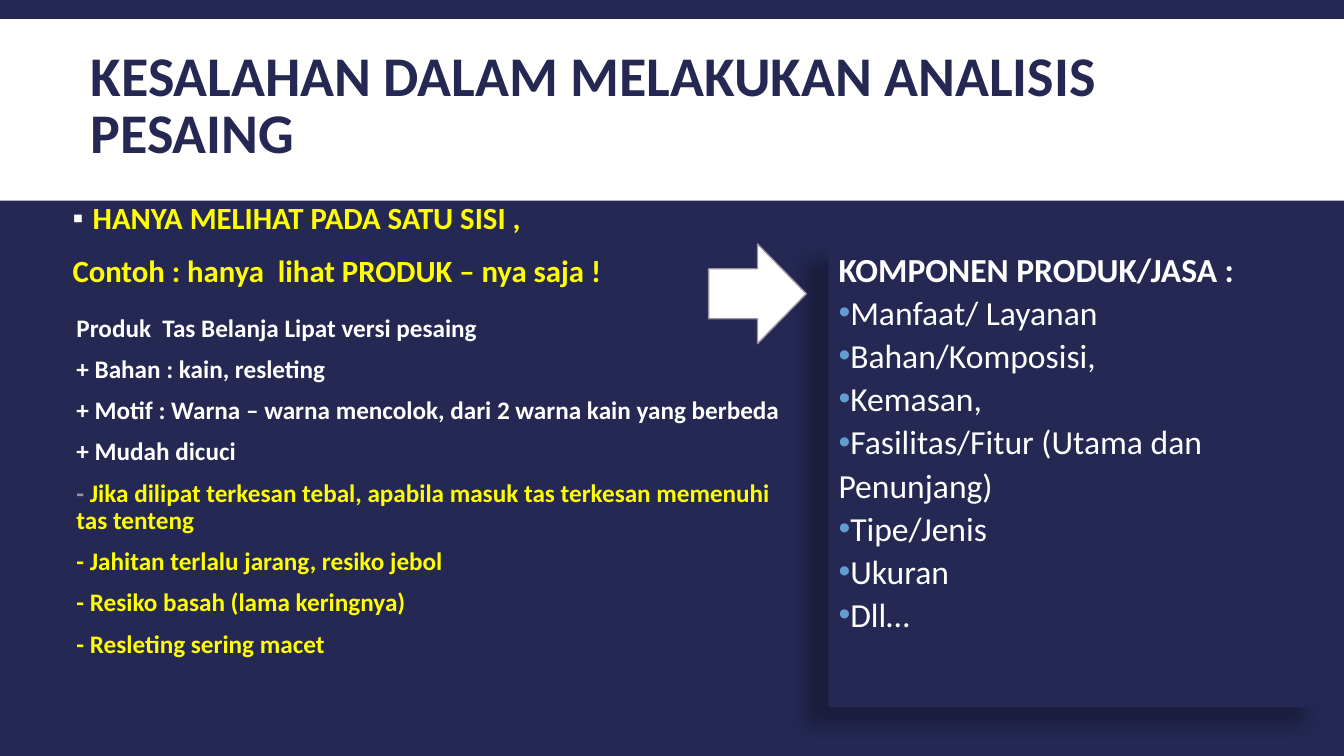
from dataclasses import dataclass
from lxml import etree
from pptx import Presentation
from pptx import util as u
from pptx.dml.color import RGBColor
from pptx.enum import shapes, text
from pptx.oxml import ns

Pt = u.Pt


@dataclass
class Theme:
    navy: str = "242852"
    white: str = "FFFFFF"
    yellow: str = "FFFF00"
    grey: str = "9D90A0"
    blue: str = "629DD1"
    black: str = "000000"
    font: str = "Calibri"
    title: int = 40
    lead: int = 22
    panel: int = 24
    detail: int = 18


T = Theme()


def add_par(tf, runs, size, bold=True, line=1.0, before=0, after=0,
            bullet=None, margin=0, indent=0):
    """Write one paragraph; runs is (text, colour) pairs, bullet is (char, colour)."""
    p = tf.paragraphs[0]
    if p.runs:
        p = tf.add_paragraph()
    p.alignment = text.PP_ALIGN.LEFT
    p.line_spacing = line
    p.space_before, p.space_after = Pt(before), Pt(after)
    for words, colour in runs:
        r = p.add_run()
        r.text = words
        r.font.name, r.font.size, r.font.bold = T.font, Pt(size), bold
        r.font.color.rgb = RGBColor.from_string(colour)
    pPr = p._p.get_or_add_pPr()
    pPr.set("marL", str(Pt(margin)))
    pPr.set("indent", str(Pt(indent)))
    if bullet:
        char, colour = bullet
        clr = etree.SubElement(pPr, ns.qn("a:buClr"))
        etree.SubElement(clr, ns.qn("a:srgbClr"), val=colour)
        etree.SubElement(pPr, ns.qn("a:buFont"), typeface="Arial")
        etree.SubElement(pPr, ns.qn("a:buChar"), char=char)
    else:
        etree.SubElement(pPr, ns.qn("a:buNone"))


def set_frame(sp, box, anchor=text.MSO_ANCHOR.TOP):
    """Place a shape and return its wrapped text frame."""
    sp.left, sp.top, sp.width, sp.height = map(Pt, box)
    tf = sp.text_frame
    tf.word_wrap = True
    tf.auto_size = text.MSO_AUTO_SIZE.NONE
    tf.vertical_anchor = anchor
    return tf


# Slide and background
prs = Presentation()
prs.slide_width, prs.slide_height = Pt(960), Pt(540)
s = prs.slides.add_slide(prs.slide_layouts[1])
s.background.fill.solid()
s.background.fill.fore_color.rgb = RGBColor.from_string(T.navy)

# Title band, panel and arrow
blocks = []
for kind, box, fill in [
    (shapes.MSO_SHAPE.RECTANGLE, (0, 13.7, 960, 129.6), T.white),
    (shapes.MSO_SHAPE.RECTANGLE, (591.9, 174.2, 354.2, 331.2), T.navy),
    (shapes.MSO_SHAPE.RIGHT_ARROW, (506.2, 174.2, 69.8, 71.3), T.white),
]:
    sp = s.shapes.add_shape(kind, *map(Pt, box))
    sp.shadow.inherit = False
    sp.fill.solid()
    sp.fill.fore_color.rgb = RGBColor.from_string(fill)
    sp.line.fill.background()
    blocks.append(sp)
band, panel, arrow = blocks
s.shapes._spTree.insert(2, band._element)
arrow.line.color.rgb = RGBColor.from_string(T.grey)
arrow.line.width = Pt(1)

# Title
tf = set_frame(s.shapes.title, (57.6, 30.2, 835.2, 93.6), text.MSO_ANCHOR.MIDDLE)
add_par(tf, [("KESALAHAN DALAM MELAKUKAN ANALISIS PESAING", T.navy)],
        T.title, line=0.85)

# Lead statement
tf = set_frame(s.placeholders[1], (44.6, 141.1, 608.4, 87.1))
lead = dict(size=T.lead, line=0.9, before=12, after=2)
add_par(tf, [("HANYA MELIHAT PADA SATU SISI ,", T.yellow)],
        bullet=("▪", T.white), margin=14.4, indent=-14.4, **lead)
add_par(tf, [("Contoh : hanya  lihat PRODUK – nya saja !", T.yellow)], **lead)

# Competitor example: strengths in white, weaknesses in yellow
box = (47.5, 221.8, 524.9, 283.7)
tf = set_frame(s.shapes.add_textbox(*map(Pt, box)), box)
for runs in [
    [("Produk  Tas Belanja Lipat versi pesaing", T.white)],
    [("+ Bahan : kain, resleting", T.white)],
    [("+ Motif : Warna – warna mencolok, dari 2 warna kain yang berbeda", T.white)],
    [("+ Mudah dicuci", T.white)],
    [("- ", T.grey),
     ("Jika dilipat terkesan tebal, apabila masuk tas terkesan memenuhi tas tenteng",
      T.yellow)],
    [("- Jahitan terlalu jarang, resiko jebol", T.yellow)],
    [("- Resiko basah (lama keringnya)", T.yellow)],
    [("- Resleting sering macet", T.yellow)],
]:
    add_par(tf, runs, T.detail, line=0.9, before=10)

# Panel shadow, falling to the lower left
effects = panel._element.spPr.find(ns.qn("a:effectLst"))
shadow = etree.SubElement(effects, ns.qn("a:outerShdw"), blurRad=str(Pt(11.8)),
                          dist=str(Pt(19.7)), dir=str(141 * 60000),
                          algn="ctr", rotWithShape="0")
clr = etree.SubElement(shadow, ns.qn("a:srgbClr"), val=T.black)
etree.SubElement(clr, ns.qn("a:alpha"), val="28000")

# Product components
tf = set_frame(panel, (591.9, 174.2, 354.2, 331.2))
add_par(tf, [("KOMPONEN PRODUK/JASA :", T.white)], T.panel, before=10)
for item in ["Manfaat/ Layanan", "Bahan/Komposisi,", "Kemasan,",
             "Fasilitas/Fitur (Utama dan Penunjang)", "Tipe/Jenis", "Ukuran", "Dll…"]:
    add_par(tf, [(item, T.white)], T.panel, bold=False, line=1.07,
            bullet=("•", T.blue), indent=-18)

prs.save("out.pptx")
